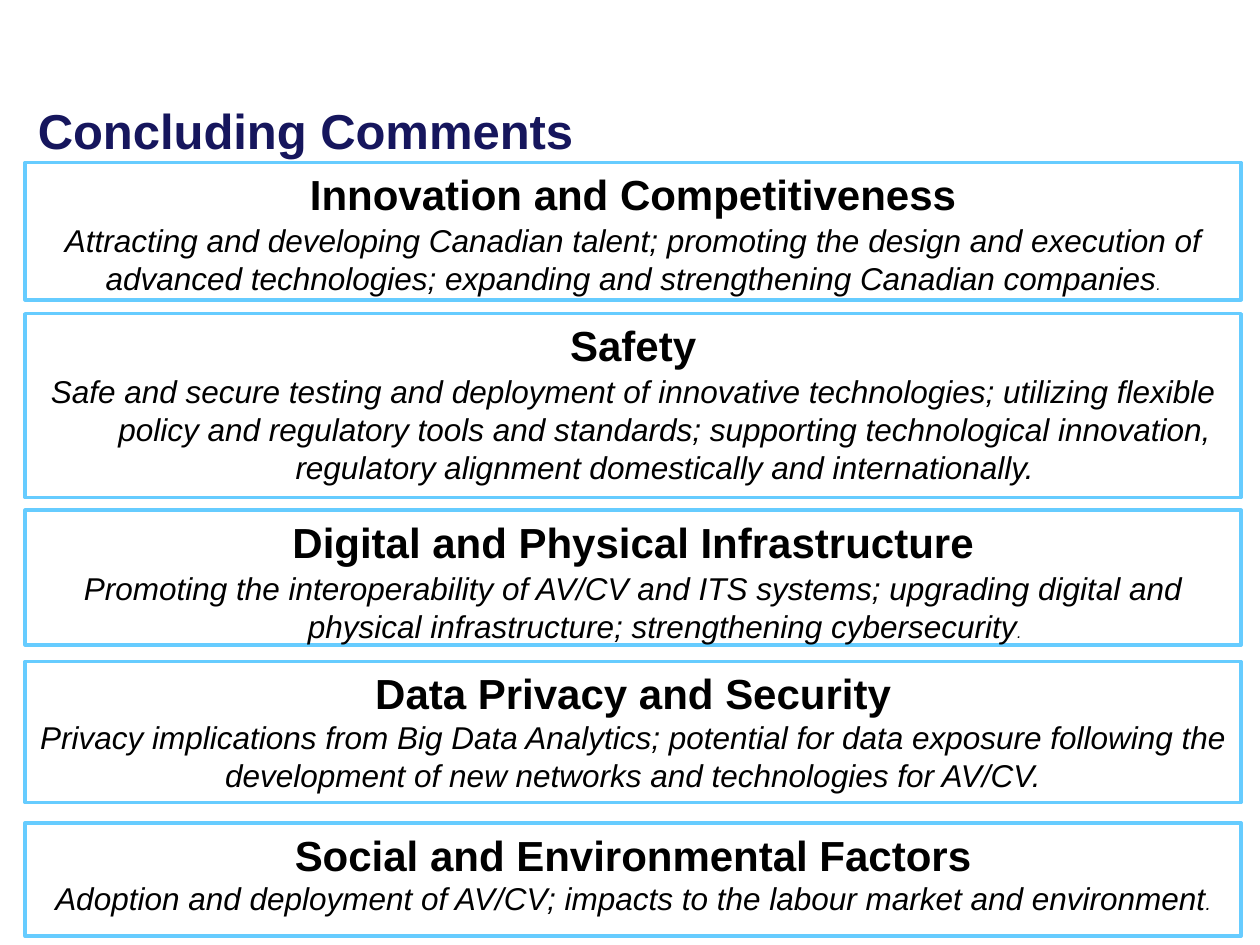
from pptx import Presentation
from pptx.dml.color import RGBColor
from pptx.enum.shapes import MSO_SHAPE
from pptx.enum.text import MSO_ANCHOR, MSO_AUTO_SIZE, PP_ALIGN
from pptx.util import Pt

RECT = MSO_SHAPE.RECTANGLE
TOP, MIDDLE = MSO_ANCHOR.TOP, MSO_ANCHOR.MIDDLE
LEFT, CENTER = PP_ALIGN.LEFT, PP_ALIGN.CENTER
FIXED = MSO_AUTO_SIZE.NONE

FONT = "Arial"
COLORS = {"title": "16165D", "text": "000000", "fill": "FFFFFF", "line": "66CCFF"}
EDGE, WIDTH = 14.4, 694.8
HANG = 36

# top, height, heading, body, size of the full stop, gap under heading, hanging
THEMES = [
    (92.9, 78.5, "Innovation and Competitiveness",
     "Attracting and developing Canadian talent; promoting the design and "
     "execution of advanced technologies; expanding and strengthening "
     "Canadian companies", 9, 1.2, False),
    (179.3, 105.1, "Safety",
     "Safe and secure testing and deployment of innovative technologies; "
     "utilizing flexible policy and regulatory tools and standards; supporting "
     "technological innovation, regulatory alignment domestically and "
     "internationally", 18, 1.2, True),
    (291.6, 77, "Digital and Physical Infrastructure",
     "Promoting the interoperability of AV/CV and ITS systems; upgrading "
     "digital and physical infrastructure; strengthening cybersecurity",
     9, 1.2, True),
    (378, 80.6, "Data Privacy and Security",
     "Privacy implications from Big Data Analytics; potential for data exposure "
     "following the development of new networks and technologies for AV/CV",
     18, 0, False),
    (470.2, 64.8, "Social and Environmental Factors",
     "Adoption and deployment of AV/CV; impacts to the labour market and "
     "environment", 11, 0, True),
]


def color(name):
    return RGBColor.from_string(COLORS[name])


def add_run(para, text, size, tint="text", bold=False, italic=False):
    run = para.add_run()
    run.text = text
    font = run.font
    font.name, font.size = FONT, Pt(size)
    font.bold, font.italic = bold, italic
    font.color.rgb = color(tint)


def set_title(slide, text):
    title = slide.shapes.title
    title.left, title.top = Pt(EDGE), Pt(51.1)
    title.width, title.height = Pt(648), Pt(46.1)
    frame = title.text_frame
    frame.auto_size, frame.vertical_anchor = FIXED, MIDDLE
    para = frame.paragraphs[0]
    para.alignment = LEFT
    add_run(para, text, 28, "title", bold=True)


def add_theme(slide, top, height, head, body, stop, gap, hang):
    """Add an outlined box with a bold heading and an italic summary."""
    box = slide.shapes.add_shape(RECT, Pt(EDGE), Pt(top), Pt(WIDTH), Pt(height))
    box.shadow.inherit = False
    box.fill.solid()
    box.fill.fore_color.rgb = color("fill")
    box.line.color.rgb = color("line")
    box.line.width = Pt(2)

    frame = box.text_frame
    frame.word_wrap, frame.vertical_anchor = True, TOP
    para = frame.paragraphs[0]
    para.alignment = CENTER
    add_run(para, head, 24, bold=True)

    para = frame.add_paragraph()
    para.alignment = CENTER
    para.space_before = Pt(gap)
    if hang:
        props = para._p.get_or_add_pPr()
        props.set("marL", str(Pt(HANG)))
        props.set("indent", str(-Pt(HANG)))
        para.space_after = Pt(6)
    if stop == 18:
        add_run(para, body + ".", 18, italic=True)
    else:
        add_run(para, body, 18, italic=True)
        add_run(para, ".", stop, italic=True)


def main():
    deck = Presentation()
    deck.slide_width, deck.slide_height = Pt(720), Pt(540)
    slide = deck.slides.add_slide(deck.slide_layouts[5])
    set_title(slide, "Concluding Comments")
    for theme in THEMES:
        add_theme(slide, *theme)
    deck.save("out.pptx")


if __name__ == "__main__":
    main()
